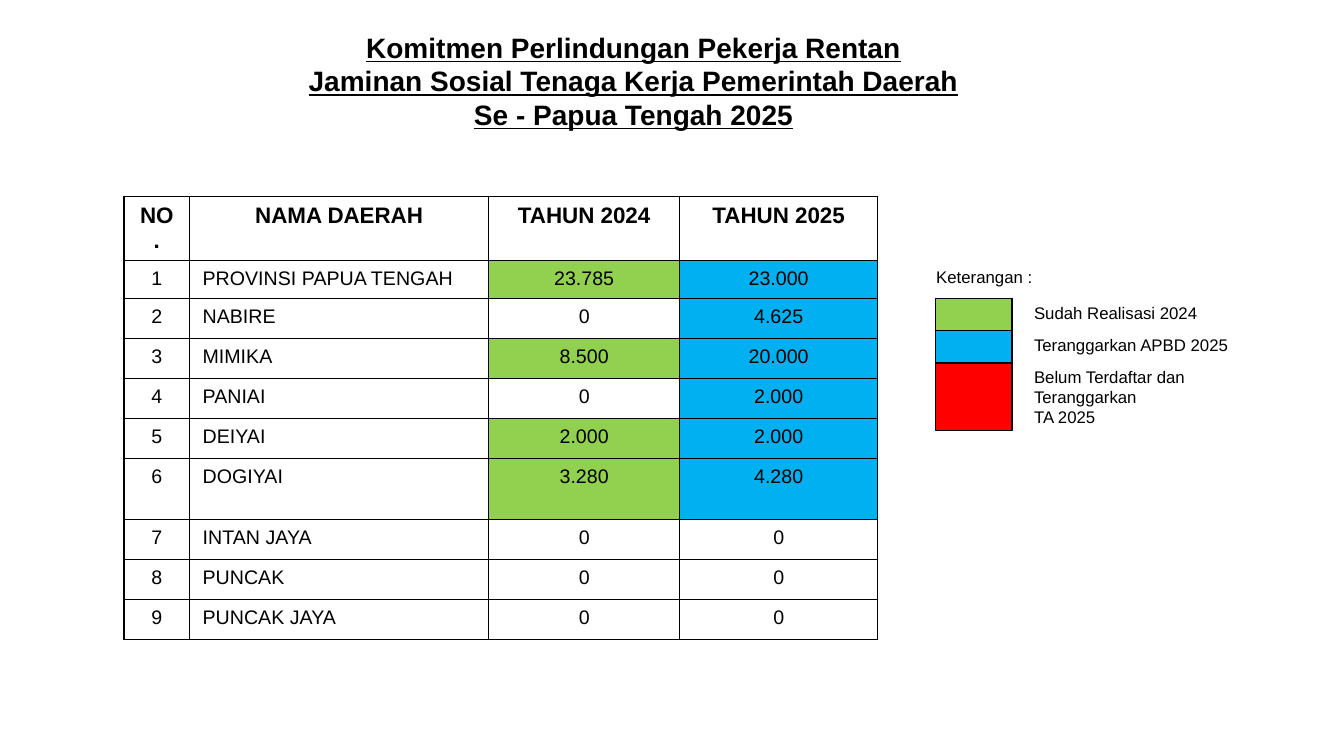
import pptx
import pptx.util
import pptx.oxml
import pptx.oxml.ns
import pptx.dml.color
import pptx.enum.text
import pptx.enum.shapes

WIDE, HIGH = 40 / 3, 7.5
HUES = {"ink": "000000", "paper": "FFFFFF", "done": "92D050",
        "plan": "00B0F0", "none": "FF0000"}
FONT = "Arial"
MID = pptx.enum.text.PP_ALIGN.CENTER
LEFT = pptx.enum.text.PP_ALIGN.LEFT
PAD = (0.13, 0.07)
TITLE = ["Komitmen Perlindungan Pekerja Rentan",
         "Jaminan Sosial Tenaga Kerja Pemerintah Daerah",
         "Se - Papua Tengah 2025"]
HEADS = ["NO.", "NAMA DAERAH", "TAHUN 2024", "TAHUN 2025"]
AREAS = [("PROVINSI PAPUA TENGAH", "23.785", "23.000"),
         ("NABIRE", "0", "4.625"),
         ("MIMIKA", "8.500", "20.000"),
         ("PANIAI", "0", "2.000"),
         ("DEIYAI", "2.000", "2.000"),
         ("DOGIYAI", "3.280", "4.280"),
         ("INTAN JAYA", "0", "0"),
         ("PUNCAK", "0", "0"),
         ("PUNCAK JAYA", "0", "0")]
KEYS = [("done", 0.3, ["Sudah Realisasi 2024"]),
        ("plan", 0.3, ["Teranggarkan APBD 2025"]),
        ("none", 0.71, ["Belum Terdaftar dan Teranggarkan", "TA 2025"])]


def inch(size):
    return pptx.util.Inches(size)


def hue(name):
    return pptx.dml.color.RGBColor.from_string(HUES[name])


def write(frame, lines, size, align=LEFT, bold=False, under=False):
    for i, line in enumerate(lines):
        para = frame.add_paragraph() if i else frame.paragraphs[0]
        para.alignment = align
        run = para.add_run()
        run.text = line
        font = run.font
        font.name, font.size = FONT, pptx.util.Pt(size)
        font.bold, font.underline = bold, under
        font.color.rgb = hue("ink")


def inset(item, side, top):
    item.margin_left = item.margin_right = inch(side)
    item.margin_top = item.margin_bottom = inch(top)


def edge(cell):
    props = cell._tc.get_or_add_tcPr()
    space = pptx.oxml.ns.nsdecls("a")
    for i, side in enumerate("LRTB"):
        props.insert(i, pptx.oxml.parse_xml(
            f'<a:ln{side} {space} w="12700"><a:solidFill>'
            f'<a:srgbClr val="{HUES["ink"]}"/></a:solidFill></a:ln{side}>'))


def paint(cell, name):
    cell.fill.solid()
    cell.fill.fore_color.rgb = hue(name)
    edge(cell)


def grid(slide, left, top, cols, rows):
    table = slide.shapes.add_table(
        len(rows), len(cols), inch(left), inch(top),
        inch(sum(cols)), inch(sum(rows))).table
    table.first_row = table.horz_banding = False
    for col, size in zip(table.columns, cols):
        col.width = inch(size)
    for row, size in zip(table.rows, rows):
        row.height = inch(size)
    return table


def label(slide, left, top, width, height, lines):
    box = slide.shapes.add_textbox(
        inch(left), inch(top), inch(width), inch(height))
    box.text_frame.word_wrap = True
    write(box.text_frame, lines, 12)


def head(slide, left, top, width, height):
    title = slide.shapes.title
    title.left, title.top = inch(left), inch(top)
    title.width, title.height = inch(width), inch(height)
    frame = title.text_frame
    frame.word_wrap = True
    frame.auto_size = pptx.enum.text.MSO_AUTO_SIZE.NONE
    frame.vertical_anchor = pptx.enum.text.MSO_ANCHOR.TOP
    inset(frame, *PAD)
    write(frame, TITLE, 20, MID, True, True)


def areas(slide, left, top, width, height):
    cols = [width * part for part in (0.087, 0.397, 0.253, 0.263)]
    first, next_row, tall = 0.44, 0.38, 0.6
    step = (height - first - next_row - tall) / 7
    rows = [first, next_row] + [step] * 4 + [tall] + [step] * 3
    table = grid(slide, left, top, cols, rows)
    lines = [HEADS] + [(str(n), *area) for n, area in enumerate(AREAS, 1)]
    for r, line in enumerate(lines):
        for c, text in enumerate(line):
            cell = table.cell(r, c)
            live = r > 0 and c > 1 and text != "0"
            paint(cell, ("done", "plan")[c - 2] if live else "paper")
            inset(cell, *PAD)
            align = LEFT if r and c == 1 else MID
            write(cell.text_frame, [text], 14 if r else 16, align, r == 0)


def block(slide, left, top, width, height, name):
    shape = slide.shapes.add_shape(
        pptx.enum.shapes.MSO_SHAPE.RECTANGLE,
        inch(left), inch(top), inch(width), inch(height))
    shape.shadow.inherit = False
    shape.fill.solid()
    shape.fill.fore_color.rgb = hue(name)
    shape.line.color.rgb = hue("ink")
    shape.line.width = pptx.util.Pt(1)


def legend(slide, left, top, width):
    step, wide, side = 0.32, 0.76, left + 0.09
    label(slide, left, top, width, 0.3, ["Keterangan :"])
    top += 0.35
    table = grid(slide, side, top + 0.01, [wide], [step] * len(KEYS))
    for r, (name, tall, lines) in enumerate(KEYS):
        cell = table.cell(r, 0)
        paint(cell, name)
        inset(cell, 0, 0)
        label(slide, left + 0.97, top + r * step, 2.42, tall, lines)
    block(slide, side, top + 2 * step + 0.01, wide, 0.67, name)


def main():
    deck = pptx.Presentation()
    deck.slide_width, deck.slide_height = inch(WIDE), inch(HIGH)
    slide = deck.slides.add_slide(deck.slide_layouts[5])
    head(slide, 1.63, 0.23, 9.31, 1.14)
    areas(slide, 1.23, 1.95, 7.48, 4.2)
    legend(slide, 9.19, 2.6, 3.17)
    deck.save("out.pptx")


if __name__ == "__main__":
    main()
